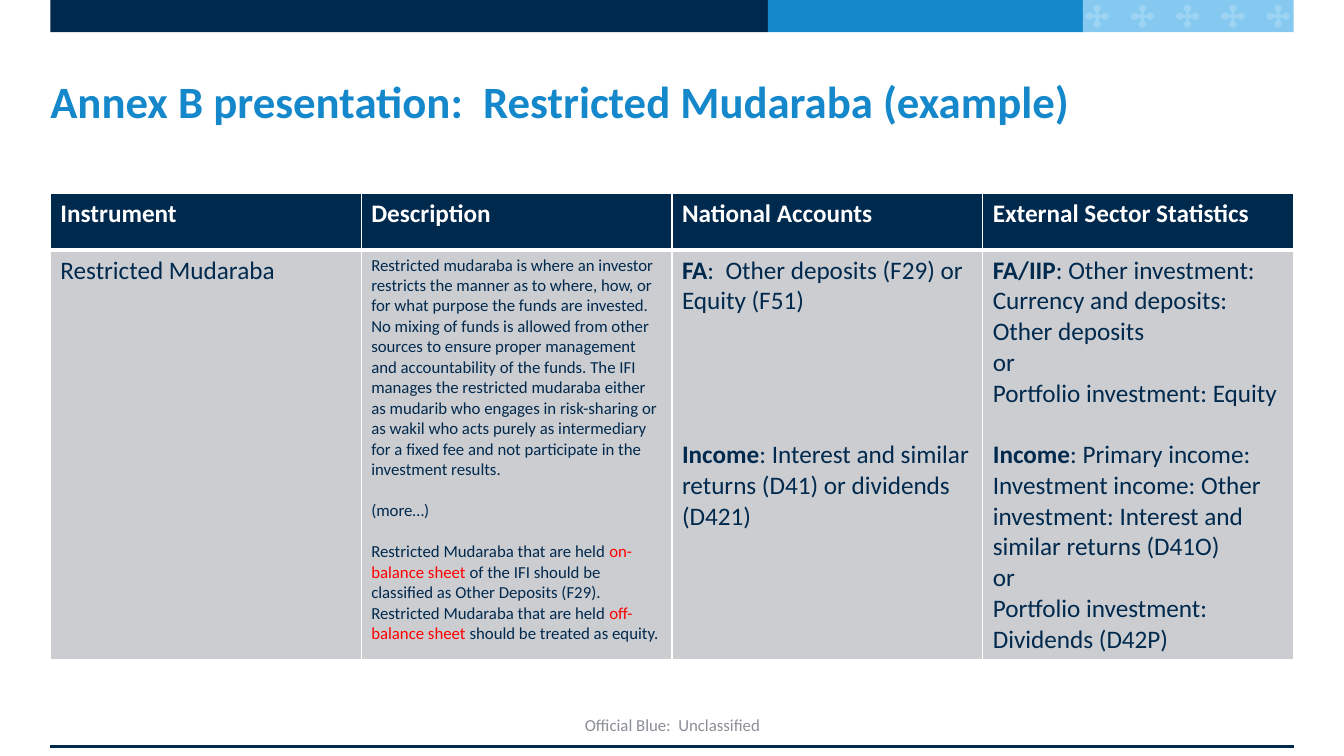
import math
from typing import NamedTuple

import pptx
import pptx.dml.color
import pptx.enum.shapes
import pptx.enum.text
import pptx.oxml
import pptx.oxml.ns
import pptx.util
from pptx.util import Cm, Pt

NAVY, BLUE, SKY = "00294E", "1488CA", "85C9F0"
WHITE, GREY, FOOTER_GREY, RED = "FFFFFF", "CCCDD0", "8C8E97", "FF0000"
FONT = "Calibri"
LEFT, WIDTH = 1.27, 31.33


class Bar(NamedTuple):
    left: float
    width: float
    color: str


class Run(NamedTuple):
    text: str
    bold: bool = False
    color: str = NAVY


class Para(NamedTuple):
    runs: list[Run]
    size: int = 18
    space_before: float = 0


BARS = [Bar(LEFT, 18.08, NAVY), Bar(19.35, 7.94, BLUE), Bar(27.29, 5.31, SKY)]

HEADINGS = ["Instrument", "Description", "National Accounts", "External Sector Statistics"]
HEADER_ROW = [[Para([Run(heading, True, WHITE)])] for heading in HEADINGS]
MUDARABA_ROW = [
    [Para([Run("Restricted Mudaraba")])],
    [
        Para([Run(
            "Restricted mudaraba is where an investor restricts the manner as to where, how, "
            "or for what purpose the funds are invested. No mixing of funds is allowed from "
            "other sources to ensure proper management and accountability of the funds. The "
            "IFI manages the restricted mudaraba either as mudarib who engages in "
            "risk-sharing or as wakil who acts purely as intermediary for a fixed fee and not "
            "participate in the investment results.")], 12),
        Para([Run("(more…)")], 12, 14.6),
        Para([
            Run("Restricted Mudaraba that are held "),
            Run("on-balance sheet ", color=RED),
            Run("of the IFI should be classified as Other Deposits (F29). "
                "Restricted Mudaraba that are held "),
            Run("off-balance sheet ", color=RED),
            Run("should be treated as equity."),
        ], 12, 14.6),
    ],
    [
        Para([Run("FA", True), Run(":  Other deposits (F29) or")]),
        Para([Run("Equity (F51)")]),
        Para([Run("Income", True),
              Run(": Interest and similar returns (D41) or dividends (D421)")],
             space_before=88),
    ],
    [
        Para([Run("FA/IIP", True),
              Run(": Other investment: Currency and deposits: Other deposits")]),
        Para([Run("or")]),
        Para([Run("Portfolio investment: Equity")]),
        Para([Run("Income", True),
              Run(": Primary income: Investment income: Other investment: "
                  "Interest and similar returns (D41O)")], space_before=22),
        Para([Run("or")]),
        Para([Run("Portfolio investment: Dividends (D42P)")]),
    ],
]


def rgb(color: str) -> pptx.dml.color.RGBColor:
    return pptx.dml.color.RGBColor.from_string(color)


def paint(shape, color: str) -> None:
    """Give a shape a plain fill, with no outline and no shadow."""
    shape.shadow.inherit = False
    shape.fill.solid()
    shape.fill.fore_color.rgb = rgb(color)
    shape.line.fill.background()


def write(frame, paras: list[Para]) -> None:
    """Fill a text frame; formats shared by all runs go on the paragraph."""
    for index, para in enumerate(paras):
        paragraph = frame.paragraphs[0] if index == 0 else frame.add_paragraph()
        paragraph.space_before = Pt(para.space_before)
        paragraph.font.name = FONT
        paragraph.font.size = Pt(para.size)
        same_bold = len({run.bold for run in para.runs}) == 1
        same_color = len({run.color for run in para.runs}) == 1
        for run in para.runs:
            piece = paragraph.add_run()
            piece.text = run.text
            (paragraph if same_bold else piece).font.bold = run.bold
            (paragraph if same_color else piece).font.color.rgb = rgb(run.color)


def add_text(slide, left: float, top: float, width: float, height: float, para: Para):
    box = slide.shapes.add_textbox(Cm(left), Cm(top), Cm(width), Cm(height))
    frame = box.text_frame
    frame.word_wrap = True
    frame.vertical_anchor = pptx.enum.text.MSO_ANCHOR.MIDDLE
    write(frame, [para])
    return frame


def add_cross(slide, center_x: float, center_y: float) -> None:
    """Draw a see-through cross whose four arms end in round lobes."""
    arm, lobe, reach, steps = 0.04, 0.09, 0.2, 16
    opening = math.pi - math.asin(arm / lobe)
    outline = []
    for quarter in range(4):
        turn = quarter * math.pi / 2
        arc = [-opening + 2 * opening * step / steps for step in range(steps + 1)]
        points = [(reach + lobe * math.cos(a), lobe * math.sin(a)) for a in arc]
        for x, y in points + [(arm, arm)]:
            outline.append((
                Cm(center_x + x * math.cos(turn) - y * math.sin(turn)),
                Cm(center_y + x * math.sin(turn) + y * math.cos(turn)),
            ))
    builder = slide.shapes.build_freeform(*outline[0])
    builder.add_line_segments(outline[1:], close=True)
    cross = builder.convert_to_shape()
    paint(cross, WHITE)
    fill_color = cross._element.spPr.find(".//" + pptx.oxml.ns.qn("a:srgbClr"))
    fill_color.append(pptx.oxml.parse_xml(
        f'<a:alpha {pptx.oxml.ns.nsdecls("a")} val="20000"/>'))


def set_borders(cell, top: float, bottom: float) -> None:
    properties = cell._tc.get_or_add_tcPr()
    for index, (side, points) in enumerate(
            [("L", 1), ("R", 1), ("T", top), ("B", bottom)]):
        properties.insert(index, pptx.oxml.parse_xml(
            f'<a:ln{side} {pptx.oxml.ns.nsdecls("a")} w="{Pt(points)}"><a:solidFill>'
            f'<a:srgbClr val="{WHITE}"/></a:solidFill></a:ln{side}>'))


def add_instruments(slide) -> None:
    table = slide.shapes.add_table(
        2, len(HEADINGS), Cm(LEFT), Cm(4.88), Cm(WIDTH), Cm(11.73)).table
    table.horz_banding = False
    for column in table.columns:
        column.width = Cm(WIDTH / len(HEADINGS))
    rows = [(HEADER_ROW, 1.42, NAVY, 1, 3), (MUDARABA_ROW, 10.31, GREY, 3, 1)]
    for row, (contents, height, color, top, bottom) in enumerate(rows):
        table.rows[row].height = Cm(height)
        for column, paras in enumerate(contents):
            cell = table.cell(row, column)
            cell.fill.solid()
            cell.fill.fore_color.rgb = rgb(color)
            set_borders(cell, top, bottom)
            write(cell.text_frame, paras)


def main() -> None:
    deck = pptx.Presentation()
    deck.slide_width, deck.slide_height = Cm(33.87), Cm(19.05)
    slide = deck.slides.add_slide(deck.slide_layouts[6])

    for bar in BARS:
        band = slide.shapes.add_shape(
            pptx.enum.shapes.MSO_SHAPE.RECTANGLE,
            Cm(bar.left), Cm(0), Cm(bar.width), Cm(0.81))
        paint(band, bar.color)
    for index in range(5):
        add_cross(slide, 27.65 + 1.14 * index, 0.41)

    base_line = slide.shapes.add_connector(
        pptx.enum.shapes.MSO_CONNECTOR.STRAIGHT,
        Cm(LEFT), Cm(18.8), Cm(LEFT + WIDTH), Cm(18.8))
    base_line.line.color.rgb = rgb(NAVY)
    base_line.line.width = Pt(2.25)
    base_line._element.spPr.append(pptx.oxml.parse_xml(
        f'<a:effectLst {pptx.oxml.ns.nsdecls("a")}/>'))

    title = add_text(slide, LEFT, 1.27, WIDTH, 2.54, Para(
        [Run("Annex B presentation:  Restricted Mudaraba (example)", True, BLUE)], 32))
    title.margin_left = title.margin_right = title.margin_top = title.margin_bottom = 0
    footer = add_text(slide, 8.48, 17.73, 16.94, 1.07, Para(
        [Run("Official Blue:  Unclassified", color=FOOTER_GREY)], 12))
    footer.paragraphs[0].alignment = pptx.enum.text.PP_ALIGN.CENTER
    add_instruments(slide)
    deck.save("out.pptx")


if __name__ == "__main__":
    main()
